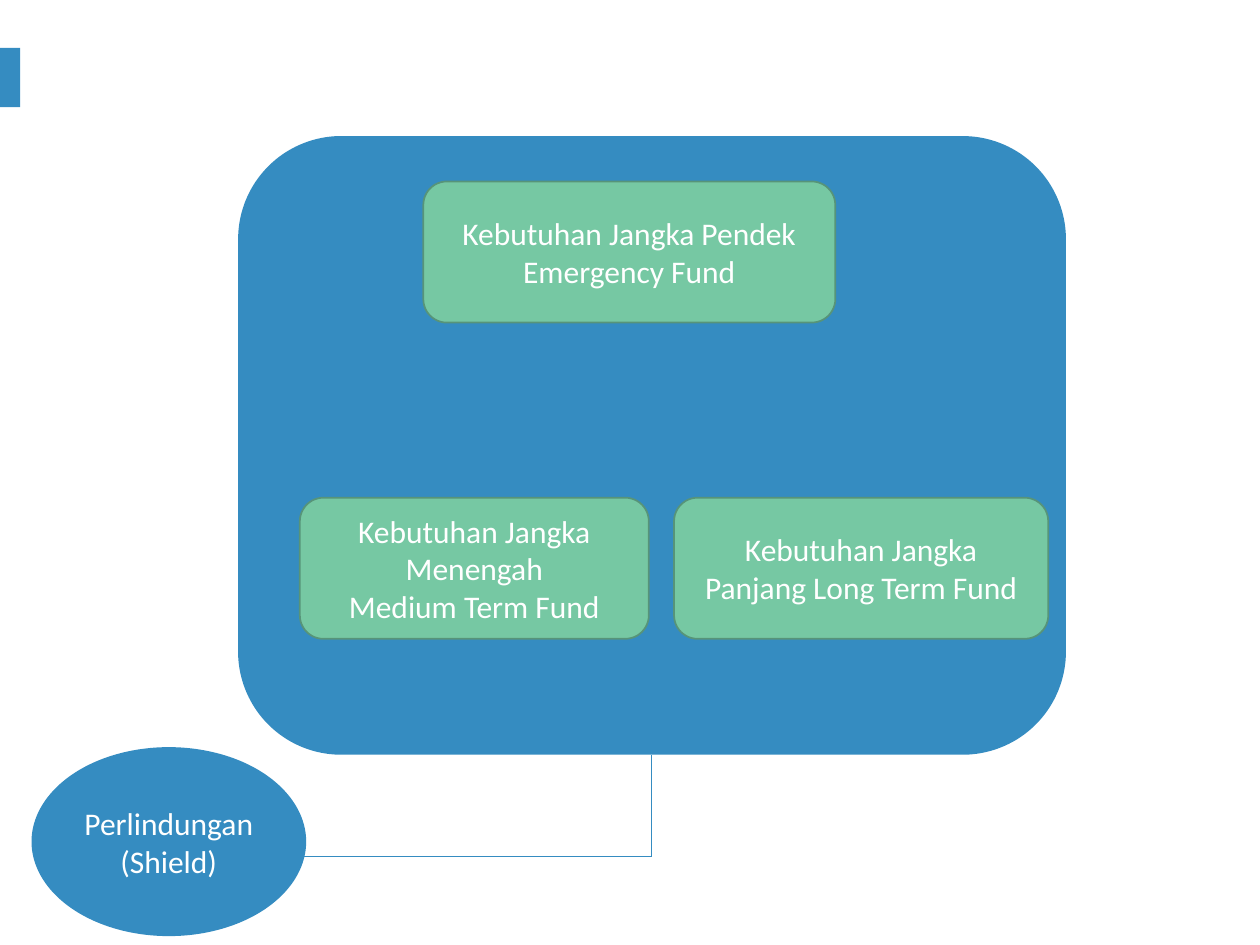
from pptx import Presentation
from pptx.dml.color import RGBColor
from pptx.enum.shapes import MSO_CONNECTOR, MSO_SHAPE
from pptx.enum.text import MSO_ANCHOR, PP_ALIGN
from pptx.oxml.ns import qn
from pptx.util import Pt
from lxml import etree

RECTANGLE = MSO_SHAPE.RECTANGLE
ROUNDED = MSO_SHAPE.ROUNDED_RECTANGLE
FUND_BOX = MSO_SHAPE.FLOWCHART_ALTERNATE_PROCESS
ELLIPSE = MSO_SHAPE.OVAL
STRAIGHT = MSO_CONNECTOR.STRAIGHT
MIDDLE = MSO_ANCHOR.MIDDLE
CENTER = PP_ALIGN.CENTER

BLUE = RGBColor(0x35, 0x8C, 0xC1)
GREEN = RGBColor(0x76, 0xC8, 0xA3)
DARK_GREEN = RGBColor(0x57, 0x94, 0x79)
WHITE = RGBColor(0xFF, 0xFF, 0xFF)

FUND_HEIGHT = 80.64
LOWER_ROW_TOP = 284.4


def add_panel(slide, kind, left, top, width, height, fill, outline=None):
    panel = slide.shapes.add_shape(kind, Pt(left), Pt(top), Pt(width), Pt(height))
    panel.shadow.inherit = False
    panel.fill.solid()
    panel.fill.fore_color.rgb = fill
    if outline is None:
        panel.line.fill.background()
    else:
        panel.line.color.rgb = outline
        panel.line.width = Pt(1)
    return panel


def write_label(panel, lines):
    frame = panel.text_frame
    frame.word_wrap = True
    frame.vertical_anchor = MIDDLE
    frame.text = "\n".join(lines)
    for paragraph in frame.paragraphs:
        paragraph.alignment = CENTER
        paragraph.font.name = "Calibri"
        paragraph.font.size = Pt(18)
        paragraph.font.color.rgb = WHITE


def add_fund(slide, left, top, width, lines):
    fund = add_panel(slide, FUND_BOX, left, top, width, FUND_HEIGHT, GREEN, DARK_GREEN)
    write_label(fund, lines)


def add_link(slide, start, end):
    link = slide.shapes.add_connector(STRAIGHT, *map(Pt, start + end))
    link.line.color.rgb = BLUE
    link.line.width = Pt(0.5)
    etree.SubElement(link._element.spPr, qn("a:effectLst"))


def main():
    prs = Presentation()
    prs.slide_width, prs.slide_height = Pt(720), Pt(540)
    slide = prs.slides.add_slide(prs.slide_layouts[6])

    # Accent at the left edge
    add_panel(slide, RECTANGLE, 0, 27.36, 11.52, 33.84, BLUE)

    # Financial needs
    add_panel(slide, ROUNDED, 136.08, 77.76, 473.04, 353.52, BLUE)
    add_fund(slide, 241.92, 103.68, 235.44,
             ["Kebutuhan Jangka Pendek", "Emergency Fund"])
    add_fund(slide, 385.2, LOWER_ROW_TOP, 213.84,
             ["Kebutuhan Jangka Panjang Long Term Fund"])
    add_fund(slide, 171.36, LOWER_ROW_TOP, 199.44,
             ["Kebutuhan Jangka Menengah", "Medium Term Fund"])

    # Protection, linked to the needs
    shield = add_panel(slide, ELLIPSE, 18, 426.96, 156.96, 108, BLUE)
    write_label(shield, ["Perlindungan (Shield)"])
    corner = (372.24, 489.6)
    add_link(slide, (372.24, 431.28), corner)
    add_link(slide, corner, (163.44, 489.6))

    prs.save("out.pptx")


if __name__ == "__main__":
    main()
